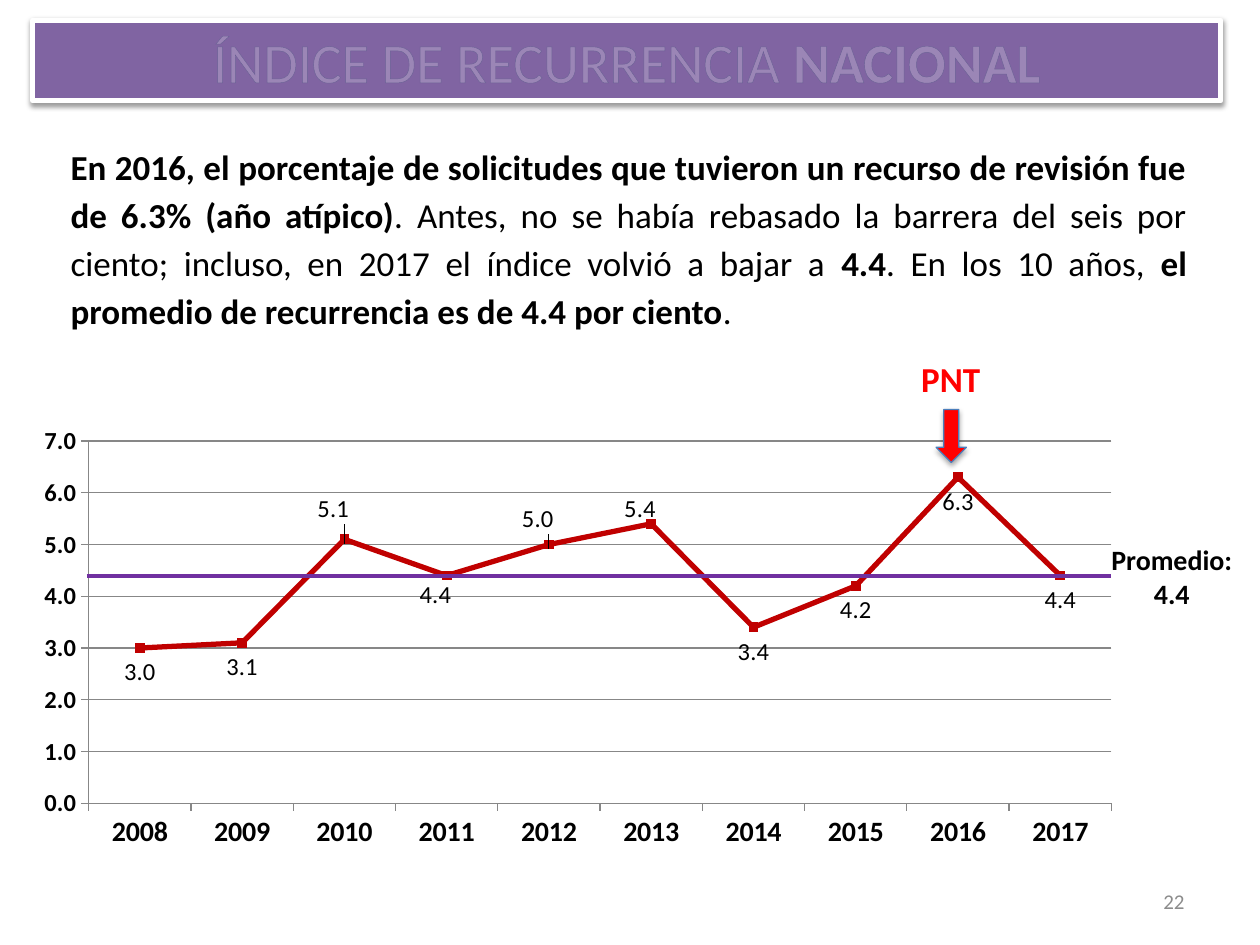
from typing import NamedTuple

import lxml.etree
import pptx
import pptx.chart.data
import pptx.dml.color
import pptx.enum.chart
import pptx.enum.shapes
import pptx.enum.text
import pptx.oxml
import pptx.oxml.ns
import pptx.util

Inches = pptx.util.Inches
Pt = pptx.util.Pt
Align = pptx.enum.text.PP_ALIGN
Anchor = pptx.enum.text.MSO_ANCHOR
qn = pptx.oxml.ns.qn
DRAWING = 'xmlns:a="http://schemas.openxmlformats.org/drawingml/2006/main"'
CHART = 'xmlns:c="http://schemas.openxmlformats.org/drawingml/2006/chart"'
FONT = "Calibri"
GRAY = "878787"


class Box(NamedTuple):
    left: float
    top: float
    width: float
    height: float


class Run(NamedTuple):
    text: str
    bold: bool = False


class Label(NamedTuple):
    text: str
    box: Box
    size: int
    color: str
    bold: bool = True
    align: Align = Align.CENTER
    anchor: Anchor = Anchor.TOP


class LabelOffset(NamedTuple):
    point: int
    x: float
    y: float


TITLE = [Run("ÍNDICE DE RECURRENCIA "), Run("NACIONAL", True)]
BODY = [
    Run("En 2016, el porcentaje de solicitudes que tuvieron un recurso de revisión "
        "fue de 6.3% (año atípico)", True),
    Run(". Antes, no se había rebasado la barrera del seis por ciento; incluso, "
        "en 2017 el índice volvió a bajar a "),
    Run("4.4", True),
    Run(". En los 10 años, "),
    Run("el promedio de recurrencia es de 4.4 por ciento", True),
    Run(". "),
]
LABELS = [
    Label("PNT", Box(7.12, 2.79, 0.85, 0.5), 20, "FF0000"),
    Label("Promedio: 4.4", Box(8.72, 4.26, 1.16, 0.65), 16, "000000"),
    Label("22", Box(7.17, 6.95, 2.33, 0.4), 12, "8C8C8C", False, Align.RIGHT, Anchor.MIDDLE),
]
RATES = [3, 3.1, 5.1, 4.4, 5, 5.4, 3.4, 4.2, 6.3, 4.4]
LABEL_OFFSETS = [
    LabelOffset(2, -0.01, -0.11),
    LabelOffset(3, -0.01, -0.01),
    LabelOffset(4, -0.01, -0.1),
    LabelOffset(5, -0.01, -0.08),
]


def rgb(color: str) -> pptx.dml.color.RGBColor:
    return pptx.dml.color.RGBColor.from_string(color)


def set_font(font, size: int, color: str) -> None:
    font.name = FONT
    font.size = Pt(size)
    font.color.rgb = rgb(color)


def set_line(line, color: str, width: float) -> None:
    line.color.rgb = rgb(color)
    line.width = Pt(width)


def place(shape, box: Box) -> None:
    shape.left, shape.top, shape.width, shape.height = map(Inches, box)


def add_shadow(shape, distance: float, opacity: int) -> None:
    properties = shape._element.spPr
    for effects in properties.findall(qn("a:effectLst")):
        properties.remove(effects)
    properties.append(pptx.oxml.parse_xml(
        f'<a:effectLst {DRAWING}><a:outerShdw blurRad="{Pt(3.1)}" dist="{Pt(distance)}" '
        f'dir="5400000" rotWithShape="0"><a:srgbClr val="000000">'
        f'<a:alpha val="{opacity * 1000}"/></a:srgbClr></a:outerShdw></a:effectLst>'))


def fill_paragraph(paragraph, runs: list[Run], size: int, color: str) -> None:
    for item in runs:
        run = paragraph.add_run()
        run.text = item.text
        run.font.bold = item.bold
        set_font(run.font, size, color)


def add_title(slide) -> None:
    title = slide.shapes.title
    place(title, Box(0.26, 0.16, 9.43, 0.64))
    title.fill.solid()
    title.fill.fore_color.rgb = rgb("8064A2")
    set_line(title.line, "FFFFFF", 3)
    add_shadow(title, 1.6, 38)
    paragraph = title.text_frame.paragraphs[0]
    paragraph.alignment = Align.CENTER
    fill_paragraph(paragraph, TITLE, 32, "FFFFFF")
    for run in paragraph.runs:
        run._r.get_or_add_rPr().insert(0, pptx.oxml.parse_xml(
            f'<a:ln {DRAWING} w="{Pt(0.75)}"><a:solidFill><a:srgbClr val="215968">'
            '<a:alpha val="22000"/></a:srgbClr></a:solidFill><a:prstDash val="solid"/></a:ln>'))


def add_body(slide) -> None:
    body = slide.placeholders[1]
    place(body, Box(0.46, 1.06, 9.06, 1.64))
    body.text_frame.auto_size = pptx.enum.text.MSO_AUTO_SIZE.NONE
    paragraph = body.text_frame.paragraphs[0]
    properties = paragraph._p.get_or_add_pPr()
    properties.set("marL", "0")
    properties.set("indent", "0")
    lxml.etree.SubElement(properties, qn("a:buNone"))
    paragraph.alignment = Align.JUSTIFY
    paragraph.line_spacing = 1.14
    paragraph.space_before = Pt(0)
    fill_paragraph(paragraph, BODY, 20, "000000")


def add_label(slide, label: Label) -> None:
    text_frame = slide.shapes.add_textbox(*map(Inches, label.box)).text_frame
    text_frame.word_wrap = True
    text_frame.vertical_anchor = label.anchor
    paragraph = text_frame.paragraphs[0]
    paragraph.text = label.text
    paragraph.alignment = label.align
    paragraph.font.bold = label.bold
    set_font(paragraph.font, label.size, label.color)


def manual_layout(x: float, y: float, extra: str = "", target: str = ""):
    return pptx.oxml.parse_xml(
        f'<c:layout {CHART}><c:manualLayout>{target}<c:x val="{x}"/><c:y val="{y}"/>'
        f'{extra}</c:manualLayout></c:layout>')


def style_axis(axis, size: int) -> None:
    axis.major_tick_mark = pptx.enum.chart.XL_TICK_MARK.OUTSIDE
    set_line(axis.format.line, GRAY, 0.75)
    set_font(axis.tick_labels.font, size, "000000")
    axis.tick_labels.font.bold = True


def add_rate_chart(slide) -> None:
    data = pptx.chart.data.CategoryChartData(number_format="#,##0.0")
    data.categories = [str(year) for year in range(2008, 2018)]
    data.add_series("Series 1", RATES)
    chart = slide.shapes.add_chart(
        pptx.enum.chart.XL_CHART_TYPE.LINE_MARKERS,
        *map(Inches, Box(0.08, 2.87, 8.92, 3.94)), data).chart
    chart.has_legend = False
    chart.has_title = False
    set_font(chart.font, 18, "000000")
    style_axis(chart.category_axis, 16)
    value_axis = chart.value_axis
    style_axis(value_axis, 14)
    value_axis.minimum_scale, value_axis.maximum_scale, value_axis.major_unit = 0, 7, 1
    value_axis.has_major_gridlines = True
    set_line(value_axis.major_gridlines.format.line, GRAY, 0.75)
    value_axis.tick_labels.number_format = "#,##0.0"
    value_axis.tick_labels.number_format_is_linked = False

    plot_area = chart._chartSpace.chart.plotArea
    for layout in plot_area.findall(qn("c:layout")):
        plot_area.remove(layout)
    plot_area.insert(0, manual_layout(
        0.07, 0.16, '<c:w val="0.91"/><c:h val="0.73"/>',
        '<c:layoutTarget val="inner"/><c:xMode val="edge"/><c:yMode val="edge"/>'))

    chart.plots[0].vary_by_categories = False
    series = chart.plots[0].series[0]
    series.smooth = False
    set_line(series.format.line, "C00000", 3)
    series.marker.style = pptx.enum.chart.XL_MARKER_STYLE.SQUARE
    series.marker.size = 5
    series.marker.format.fill.solid()
    series.marker.format.fill.fore_color.rgb = rgb("C00000")
    set_line(series.marker.format.line, "C00000", 0.75)
    labels = series.data_labels
    labels.show_value = True
    labels.number_format = "#,##0.0"
    labels.number_format_is_linked = False
    labels.position = pptx.enum.chart.XL_LABEL_POSITION.BELOW
    set_font(labels.font, 14, "000000")
    for offset in LABEL_OFFSETS:
        label = series.points[offset.point].data_label
        set_font(label.font, 14, "000000")
        label.position = pptx.enum.chart.XL_LABEL_POSITION.BELOW
    for element, offset in zip(series._element.iter(qn("c:dLbl")), LABEL_OFFSETS):
        element.insert(1, manual_layout(offset.x, offset.y))


def add_arrow(slide) -> None:
    arrow = slide.shapes.add_shape(
        pptx.enum.shapes.MSO_SHAPE.DOWN_ARROW, *map(Inches, Box(7.43, 3.25, 0.24, 0.42)))
    arrow.fill.solid()
    arrow.fill.fore_color.rgb = rgb("FF0000")
    set_line(arrow.line, "4B7EBC", 0.75)
    add_shadow(arrow, 1.8, 35)


def add_average_line(slide) -> None:
    connector = slide.shapes.add_connector(
        pptx.enum.shapes.MSO_CONNECTOR.STRAIGHT, *map(Inches, (0.69, 4.57, 8.82, 4.57)))
    set_line(connector.line, "7030A0", 2)
    lxml.etree.SubElement(connector._element.spPr, qn("a:effectLst"))


def main() -> None:
    presentation = pptx.Presentation()
    presentation.slide_width, presentation.slide_height = Inches(10), Inches(7.5)
    slide = presentation.slides.add_slide(presentation.slide_layouts[1])
    add_title(slide)
    add_body(slide)
    add_rate_chart(slide)
    add_arrow(slide)
    add_average_line(slide)
    for label in LABELS:
        add_label(slide, label)
    presentation.save("out.pptx")


if __name__ == "__main__":
    main()
